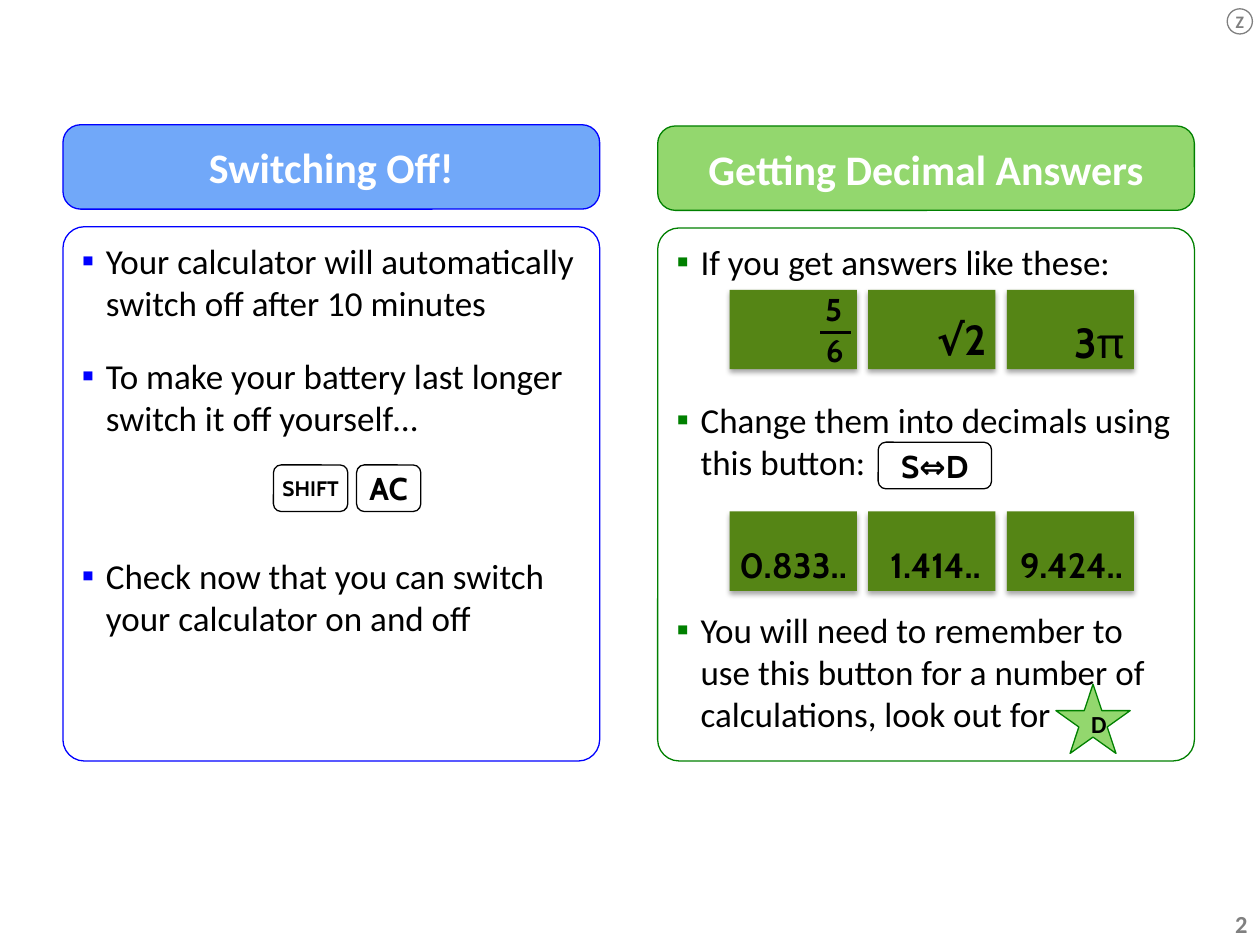
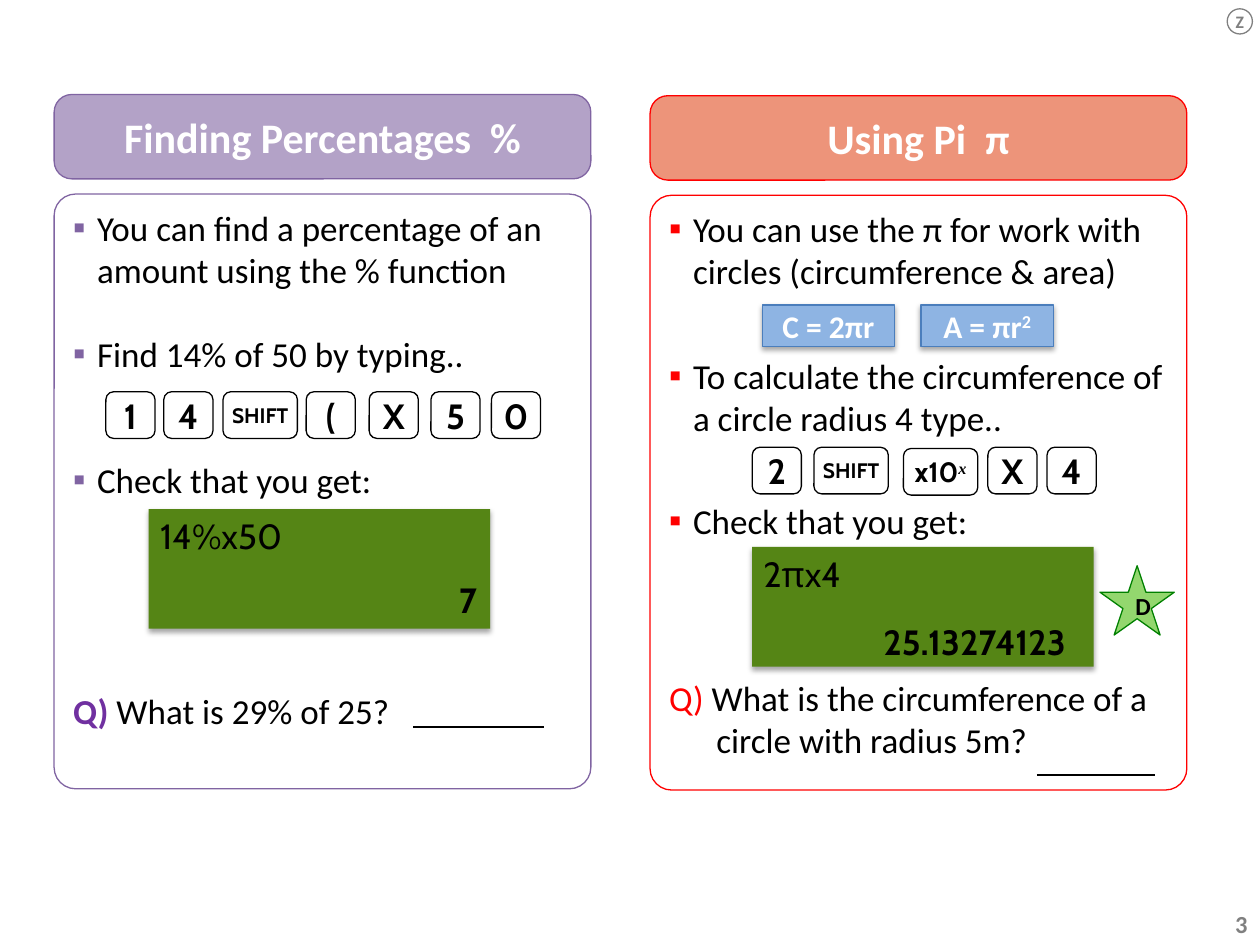
from dataclasses import dataclass
from typing import Any, NamedTuple

import lxml.etree
import pptx
import pptx.dml.color
import pptx.enum.shapes
import pptx.enum.text
import pptx.oxml
import pptx.oxml.ns
import pptx.util

SHAPE = pptx.enum.shapes.MSO_SHAPE
ALIGN = pptx.enum.text.PP_ALIGN
ANCHOR = pptx.enum.text.MSO_ANCHOR
qn = pptx.oxml.ns.qn

COLORS = {
    "black": "000000", "white": "FFFFFF", "grey": "808080", "screen": "558515",
    "blue": "0000FF", "blue_fill": "71A8F9", "green": "008000", "green_fill": "93D76E",
    "purple": "8064A2", "purple_fill": "B3A2C7", "question": "7030A0",
    "red": "FF0000", "red_fill": "ED947A", "formula": "8EB4E3", "formula_line": "4B7EBC",
}

# Slide grid: 100 columns by 75 rows
WIDTH, HEIGHT = pptx.util.Inches(10), pptx.util.Inches(7.5)
COL, ROW = WIDTH / 100, HEIGHT / 75
PANEL_W, HEADING_H, CURVE_INSET, HANG = 42.6, 6.7, 0.5, 1.9
KEY_W, WIDE_KEY_W, KEY_H = 3.9, 5.9, 3.7
READOUT_W, READOUT_H = 11.7, 7

# Text formats
HEADING = {"size": 24, "name": "Calibri", "color": "white", "bold": True}
BODY = {"size": 20, "name": "Calibri", "color": "black", "bold": False}
FORMULA = {**HEADING, "size": 18}
STAR = {"size": 14, "name": "Calibri", "color": "black", "bold": True}
MARK = {"size": 10, "name": "Calibri", "color": "grey", "bold": True}
NUMBER = {**MARK, "size": 14}
DISPLAY = {"size": 20, "name": "Cabin", "color": "black", "bold": True}

Runs = list[tuple[str, dict[str, Any]]]


class Box(NamedTuple):
    """Left, top, width and height in columns and rows."""
    x: float
    y: float
    w: float
    h: float

    def emu(self) -> tuple[int, int, int, int]:
        return round(self.x * COL), round(self.y * ROW), round(self.w * COL), round(self.h * ROW)


@dataclass
class Item:
    """A list paragraph with the gap above it in points."""
    runs: str | Runs
    gap: float = 0
    bullet: bool = True
    hang: float = HANG


@dataclass
class Panel:
    """A heading band above a framed list."""
    holders: tuple[int, int]
    x: float
    y: float
    body_step: float
    body_h: float
    radius: float
    color: str
    heading: str
    items: list[Item]


@dataclass
class Label:
    """A key, or a readout on a calculator screen."""
    x: float
    y: float
    runs: str | Runs
    w: float = READOUT_W
    size: float = 20
    bold: bool = True
    align: Any = ALIGN.CENTER


def rgb(name: str) -> pptx.dml.color.RGBColor:
    return pptx.dml.color.RGBColor.from_string(COLORS[name])


def set_all(obj: Any, values: dict[str, Any]) -> None:
    for key, value in values.items():
        setattr(obj, key, value)


def add_runs(p: Any, runs: str | Runs, fmt: dict[str, Any]) -> None:
    for text, extra in [(runs, {})] if isinstance(runs, str) else runs:
        r = p.add_run()
        r.text = text
        values = {**fmt, **extra}
        r.font.color.rgb = rgb(values.pop("color"))
        if values.pop("raised", False):
            r._r.get_or_add_rPr().set("baseline", "30000")
        values["size"] = pptx.util.Pt(values["size"])
        set_all(r.font, values)


def set_frame(tf: Any, anchor: Any, margins: tuple[float, float] = (0.1, 0.05), wrap: bool = True) -> None:
    side, end = (pptx.util.Inches(m) for m in margins)
    set_all(tf, {"auto_size": pptx.enum.text.MSO_AUTO_SIZE.NONE, "word_wrap": wrap,
                 "vertical_anchor": anchor, "margin_left": side, "margin_right": side,
                 "margin_top": end, "margin_bottom": end})


def write(sp: Any, runs: str | Runs, fmt: dict[str, Any], align: Any = ALIGN.CENTER,
          anchor: Any = ANCHOR.MIDDLE, **frame: Any) -> None:
    set_frame(sp.text_frame, anchor, **frame)
    p = sp.text_frame.paragraphs[0]
    set_all(p, {"alignment": align, "space_before": pptx.util.Pt(0)})
    add_runs(p, runs, fmt)


def add_shape(slide: Any, kind: Any, box: Box, fill: str = "", line: str = "",
              radius: float | None = None, shadow: bool = False) -> Any:
    sp = slide.shapes.add_shape(kind, *box.emu())
    sp.shadow.inherit = False
    if fill:
        sp.fill.solid()
        sp.fill.fore_color.rgb = rgb(fill)
    else:
        sp.fill.background()
    if line:
        sp.line.color.rgb = rgb(line)
        sp.line.width = pptx.util.Pt(0.75)
    else:
        sp.line.fill.background()
    if radius is not None:
        sp.adjustments[0] = radius
    if shadow:
        effects = sp._element.spPr.find(qn("a:effectLst"))
        drop = lxml.etree.SubElement(effects, qn("a:outerShdw"), blurRad="39370", dist="22860",
                                     dir="5400000", rotWithShape="0")
        color = lxml.etree.SubElement(drop, qn("a:srgbClr"), val=COLORS["black"])
        lxml.etree.SubElement(color, qn("a:alpha"), val="35000")
    return sp


def add_line(slide: Any, x1: float, x2: float, y: float, width: float = 0.75) -> None:
    ends = (round(v) for v in (x1 * COL, y * ROW, x2 * COL, y * ROW))
    line = slide.shapes.add_connector(pptx.enum.shapes.MSO_CONNECTOR.STRAIGHT, *ends)
    line.line.color.rgb = rgb("black")
    line.line.width = pptx.util.Pt(width)
    lxml.etree.SubElement(line._element.spPr, qn("a:effectLst"))


def place(slide: Any, idx: int, box: Box) -> Any:
    """Move a placeholder and bring it in front of its band."""
    ph = next(s for s in slide.placeholders if s.placeholder_format.idx == idx)
    set_all(ph, dict(zip(("left", "top", "width", "height"), box.emu())))
    slide.shapes._spTree.append(ph._element)
    return ph


def add_item(p: Any, item: Item, color: str) -> None:
    set_all(p, {"alignment": ALIGN.LEFT, "space_before": pptx.util.Pt(item.gap),
                "space_after": pptx.util.Pt(0), "line_spacing": 1.0})
    pPr = p._p.get_or_add_pPr()
    hang = round(item.hang * COL)
    pPr.set("marL", str(hang))
    pPr.set("indent", str(-hang))
    if item.bullet:
        bullet_color = lxml.etree.SubElement(pPr, qn("a:buClr"))
        lxml.etree.SubElement(bullet_color, qn("a:srgbClr"), val=COLORS[color])
        lxml.etree.SubElement(pPr, qn("a:buFont"), typeface="Calibri")
        lxml.etree.SubElement(pPr, qn("a:buChar"), char="▪")
    else:
        lxml.etree.SubElement(pPr, qn("a:buNone"))
    add_runs(p, item.runs, BODY)


def add_panel(slide: Any, panel: Panel) -> None:
    head = Box(panel.x, panel.y, PANEL_W, HEADING_H)
    body = Box(panel.x, panel.y + panel.body_step, PANEL_W, panel.body_h)
    add_shape(slide, SHAPE.ROUNDED_RECTANGLE, head, panel.color + "_fill", panel.color, 0.21)
    add_shape(slide, SHAPE.ROUNDED_RECTANGLE, body, "", panel.color, panel.radius)
    write(place(slide, panel.holders[0], head), panel.heading, HEADING)
    inner = Box(body.x + CURVE_INSET, body.y + CURVE_INSET,
                body.w - 2 * CURVE_INSET, body.h - 2 * CURVE_INSET)
    tf = place(slide, panel.holders[1], inner).text_frame
    set_frame(tf, ANCHOR.TOP)
    for i, item in enumerate(panel.items):
        add_item(tf.add_paragraph() if i else tf.paragraphs[0], item, panel.color)


def add_screen(slide: Any, x: float, y: float, w: float = 10.1, h: float = 6.3) -> None:
    add_shape(slide, SHAPE.RECTANGLE, Box(x, y, w, h), "screen", shadow=True)


def add_key(slide: Any, key: Label) -> None:
    sp = add_shape(slide, SHAPE.ROUNDED_RECTANGLE, Box(key.x, key.y, key.w, KEY_H), "white", "black")
    write(sp, key.runs, {**DISPLAY, "size": key.size}, margins=(0.04, 0.05))


def add_readout(slide: Any, label: Label) -> None:
    sp = slide.shapes.add_textbox(*Box(label.x, label.y, label.w, READOUT_H).emu())
    write(sp, label.runs, {**DISPLAY, "size": label.size, "bold": label.bold}, label.align)


def add_star(slide: Any, x: float, y: float) -> None:
    write(add_shape(slide, SHAPE.STAR_5_POINT, Box(x, y, 5.9, 5.5), "green_fill", "green"), "D", STAR)


def new_slide(prs: Any, number: int, panels: list[Panel]) -> Any:
    """Start a two-panel slide with the corner mark and page number."""
    slide = prs.slides.add_slide(prs.slide_layouts.get_by_name("Comparison"))
    for panel in panels:
        add_panel(slide, panel)
    used = {idx for panel in panels for idx in panel.holders}
    for ph in list(slide.placeholders):
        if ph.placeholder_format.idx not in used:
            ph._element.getparent().remove(ph._element)
    write(add_shape(slide, SHAPE.OVAL, Box(97.4, 0.7, 2, 2), "", "grey"), "Z", MARK,
          margins=(0, 0), wrap=False)
    sp = slide.shapes.add_textbox(*Box(94.2, 71.6, 5.8, 3.4).emu())
    write(sp, str(number), NUMBER, ALIGN.RIGHT, ANCHOR.BOTTOM)
    return slide


LEFT, RIGHT = (0, 2), (3, 4)


def build_power_and_decimals(prs: Any) -> None:
    slide = new_slide(prs, 2, [
        Panel(LEFT, 5, 9.9, 8.1, 42.4, 0.04, "blue", "Switching Off!", [
            Item("Your calculator will automatically switch off after 10 minutes"),
            Item("To make your battery last longer switch it off yourself…", 18),
            Item("Check now that you can switch your calculator on and off", 66)]),
        Panel(RIGHT, 52.2, 10, 8.1, 42.3, 0.04, "green", "Getting Decimal Answers", [
            Item("If you get answers like these:"),
            Item("Change them into decimals using this button:", 66),
            Item("You will need to remember to use this button for a number of "
                 "calculations, look out for", 72)]),
    ])
    # Exact answers above, decimals below
    for y in (23, 40.6):
        for i in range(3):
            add_screen(slide, 57.9 + 11 * i, y)
    for label in (Label(60.3, 21, "5", size=18), Label(60.4, 24.3, "6", size=18),
                  Label(70.5, 23.4, "√2", size=24),
                  Label(81.4, 23.6, [("3", {}), ("π", {"bold": False})], size=24),
                  Label(57.1, 41.3, "0.833.."), Label(68.4, 41.3, "1.414.."),
                  Label(79.2, 41.3, "9.424..")):
        add_readout(slide, label)
    add_line(slide, 65.1, 67.5, 26.4, 2)
    for key in (Label(21.7, 36.9, "SHIFT", WIDE_KEY_W, 12), Label(28.3, 36.9, "AC", 5.1, 18),
                Label(69.7, 35.1, "S⇔D", 9, 18)):
        add_key(slide, key)
    add_star(slide, 83.8, 54.3)


def build_percentages_and_pi(prs: Any) -> None:
    slide = new_slide(prs, 3, [
        Panel(LEFT, 4.3, 7.5, 7.9, 47.2, 0.04, "purple", "Finding Percentages  %", [
            Item("You can find a percentage of an amount using the % function"),
            Item("Find 14% of 50 by typing..", 24),
            Item("Check that you get:", 48),
            Item([("Q) ", {"color": "question", "bold": True}), ("What is 29% of 25?", {})],
                 108, bullet=False)]),
        Panel(RIGHT, 51.6, 7.6, 7.9, 47.2, 0.04, "red", "Using Pi  π", [
            Item("You can use the π for work with circles (circumference & area)"),
            Item("To calculate the circumference of a circle radius 4 type..", 36),
            Item("Check that you get:", 34.5),
            Item([("Q)", {"color": "red"}),
                  (" What is the circumference of a circle with radius 5m?", {})],
                 77, bullet=False, hang=3.75)]),
    ])
    # Key sequences
    for x, text in zip((8.4, 13, 24.3, 29.3, 34.2, 39), "14(X50"):
        add_key(slide, Label(x, 31.1, text, KEY_W))
    for x, text in zip((59.7, 78.4, 83.1), "2X4"):
        add_key(slide, Label(x, 35.5, text, KEY_W))
    for x, y in ((17.7, 31.1), (64.6, 35.5)):
        add_key(slide, Label(x, y, "SHIFT", WIDE_KEY_W, 12))
    power = {"name": "Times New Roman", "italic": True, "raised": True}
    add_key(slide, Label(71.7, 35.6, [("x10", {}), ("x", power)], WIDE_KEY_W, 16))
    # Circle formulas
    formulas: list[Runs] = [[("C = 2πr", {})], [("A = πr", {}), ("2", {"raised": True})]]
    for i, runs in enumerate(formulas):
        sp = add_shape(slide, SHAPE.RECTANGLE, Box(60.5 + 12.6 * i, 24.2, 10.5, 3.3),
                       "formula", "formula_line", shadow=True)
        write(sp, runs, FORMULA)
    # Calculator screens
    for x, y in ((11.8, 40.4), (59.7, 43.4)):
        add_screen(slide, x, y, 27.1, 9.5)
    for label in (Label(9.4, 39, "14%x50", 16.3, bold=False), Label(31.3, 44.1, "7"),
                  Label(59.6, 42, "2πx4", 16.3, bold=False, align=ALIGN.LEFT),
                  Label(65.6, 47.4, "25.13274123", 23.5)):
        add_readout(slide, label)
    # Answer lines
    add_line(slide, 32.8, 43.2, 57.7)
    add_line(slide, 82.3, 91.7, 61.5)
    add_star(slide, 87.3, 44.9)


def main() -> None:
    prs = pptx.Presentation()
    set_all(prs, {"slide_width": WIDTH, "slide_height": HEIGHT})
    build_power_and_decimals(prs)
    build_percentages_and_pi(prs)
    prs.save("out.pptx")


if __name__ == "__main__":
    main()
